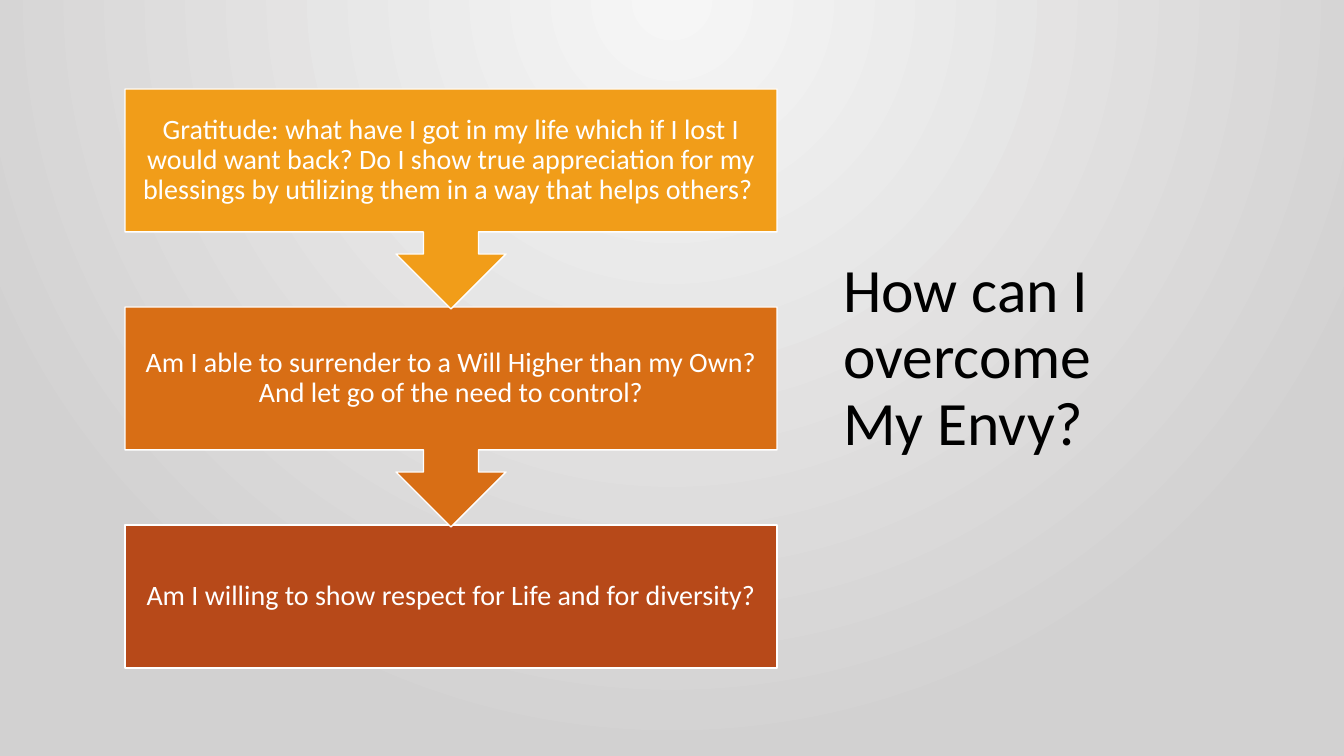
from lxml.etree import SubElement
from pptx import Presentation
from pptx.dml.color import RGBColor
from pptx.enum.shapes import MSO_SHAPE
from pptx.enum.text import MSO_ANCHOR, MSO_AUTO_SIZE, PP_ALIGN
from pptx.oxml.ns import qn
from pptx.util import Emu, Pt

COLORS = {
    "amber": "F19D19",
    "orange": "D86E15",
    "rust": "B74919",
    "white": "FFFFFF",
    "black": "000000",
    "glow": "F6F6F6",
    "grey": "D2D1D1",
}
LEFT, TOP, WIDTH = 125, 89, 652
BOX_HEIGHT, CALLOUT_HEIGHT, PITCH = 143, 220, 218
STEPS = [
    ("Gratitude: what have I got in my life which if I lost I would want back? "
     "Do I show true appreciation for my blessings by utilizing them in a way "
     "that helps others? ", "amber"),
    ("Am I able to surrender to a Will Higher than my Own? "
     "And let go of the need to control?", "orange"),
    ("Am I willing to show respect for Life and for diversity?", "rust"),
]


def px(n):
    return Emu(round(n * 914400 / 100.8))


def rgb(name):
    return RGBColor.from_string(COLORS[name])


class SlideBuilder:
    """Holds the text style and the current slide."""

    font = "Calibri"

    def __init__(self, prs):
        self.s = prs.slides.add_slide(prs.slide_layouts[5])

    def background(self, inner, outer):
        fill = self.s.background.fill
        fill.gradient()
        for stop, name in zip(fill.gradient_stops, (inner, outer)):
            stop.color.rgb = rgb(name)
        lin = next(self.s.element.iter(qn("a:lin")))
        grad = lin.getparent()
        grad.remove(lin)
        circle = SubElement(grad, qn("a:path"), path="circle")
        SubElement(circle, qn("a:fillToRect"), l="43000", t="0", r="43000", b="100000")

    def style_text(self, sp, text, size, color, align, anchor):
        tf = sp.text_frame
        tf.text = text
        tf.word_wrap = True
        tf.auto_size = MSO_AUTO_SIZE.NONE
        tf.vertical_anchor = anchor
        p = tf.paragraphs[0]
        p.alignment = align
        p.line_spacing = 0.9
        r = p.runs[0]
        r.font.name = self.font
        r.font.size = Pt(size)
        r.font.color.rgb = rgb(color)
        return tf

    def title(self, text, x, y, w, h):
        sp = self.s.shapes.title
        sp.left, sp.top, sp.width, sp.height = map(px, (x, y, w, h))
        self.style_text(sp, text, 44, "black", PP_ALIGN.LEFT, MSO_ANCHOR.TOP)

    def step(self, kind, text, color, x, y, w, h):
        sp = self.s.shapes.add_shape(kind, *map(px, (x, y, w, h)))
        sp.shadow.inherit = False
        sp.fill.solid()
        sp.fill.fore_color.rgb = rgb(color)
        sp.line.color.rgb = rgb("white")
        sp.line.width = Pt(1)
        tf = self.style_text(sp, text, 20, "white", PP_ALIGN.CENTER, MSO_ANCHOR.MIDDLE)
        tf.margin_left = tf.margin_right = tf.margin_top = tf.margin_bottom = px(16)


def main():
    prs = Presentation()
    prs.slide_width, prs.slide_height = px(1344), px(756)
    slide = SlideBuilder(prs)
    slide.background("glow", "grey")
    slide.title("How can I overcome My Envy?", 833, 254, 348, 413)
    last = len(STEPS) - 1
    for i, (text, color) in reversed(list(enumerate(STEPS))):
        kind, height = MSO_SHAPE.DOWN_ARROW_CALLOUT, CALLOUT_HEIGHT
        if i == last:
            kind, height = MSO_SHAPE.RECTANGLE, BOX_HEIGHT
        slide.step(kind, text, color, LEFT, TOP + i * PITCH, WIDTH, height)
    prs.save("out.pptx")


if __name__ == "__main__":
    main()
